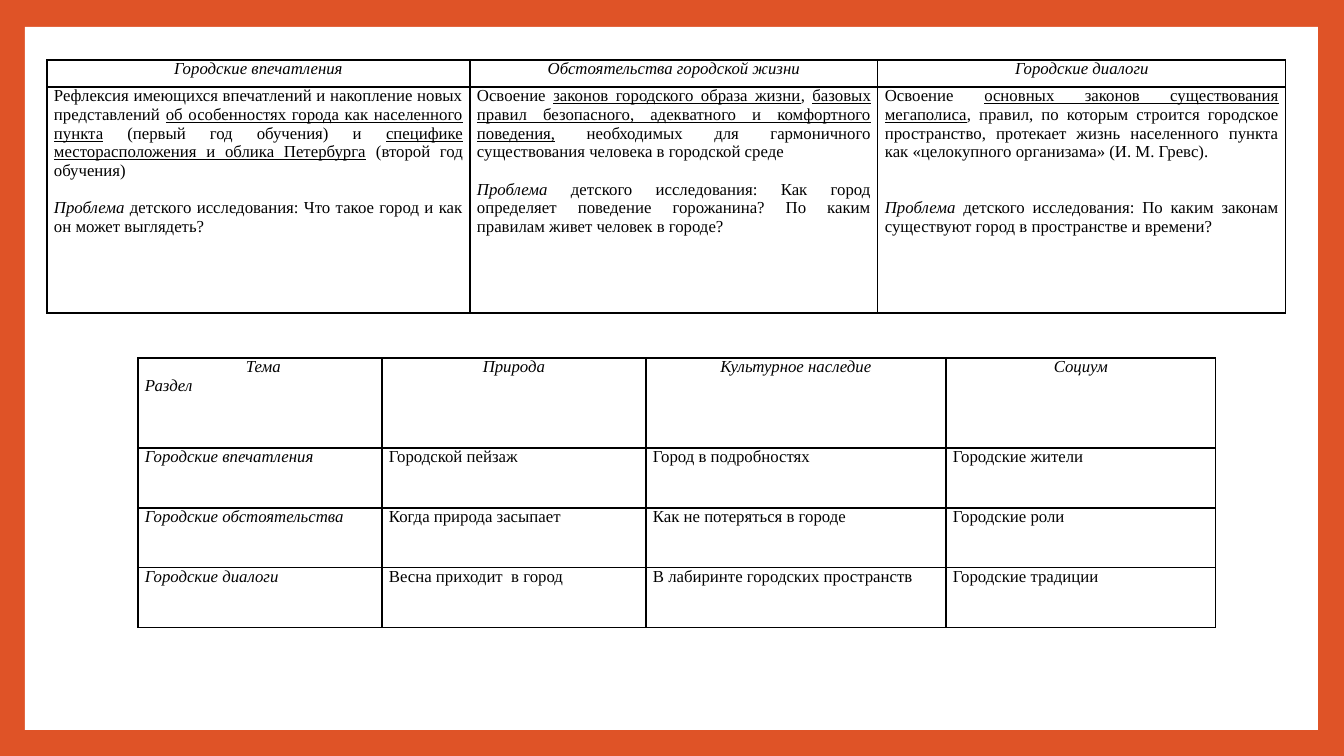
from lxml import etree
from pptx import Presentation
from pptx import util as u
from pptx.dml.color import RGBColor
from pptx.enum import shapes, text
from pptx.oxml.ns import qn

PX = 914400 / 100.8
COLORS = {"frame": "DF5327", "sheet": "FFFFFF", "ink": "000000"}
FONT, SIZE, LINE_HEIGHT = "Times New Roman", 12, 13.3
CENTER, JUSTIFY = text.PP_ALIGN.CENTER, text.PP_ALIGN.JUSTIFY

# Content: a cell is a list of paragraphs, each (align, blank lines above, indent px, spans);
# a span is (wording, style), where style is "i" italic, "u" underlined or "" plain


def line(wording, style="", align=JUSTIFY, indent=0):
    return align, 0, indent, [(wording, style)]


def head(wording):
    return [line(wording, "i", CENTER)]


def problem(question, gap):
    return JUSTIFY, gap, 0, [("Проблема", "i"), (" детского исследования: " + question, "")]


def topic(section, *themes):
    return [[line(section, "i")]] + [[line(theme)] for theme in themes]


SECTIONS = [
    [head("Городские впечатления"), head("Обстоятельства городской жизни"), head("Городские диалоги")],
    [
        [(JUSTIFY, 0, 0, [
            ("Рефлексия имеющихся впечатлений и накопление новых представлений ", ""),
            ("об особенностях города как населенного пункта", "u"),
            (" (первый год обучения) и ", ""),
            ("специфике месторасположения и облика Петербурга", "u"),
            (" (второй год обучения)", "")]),
         problem("Что такое город и как он может выглядеть?", 1)],
        [(JUSTIFY, 0, 0, [
            ("Освоение ", ""),
            ("законов городского образа жизни", "u"),
            (", ", ""),
            ("базовых правил безопасного, адекватного и комфортного поведения,", "u"),
            (" необходимых для гармоничного существования человека в городской среде", "")]),
         problem("Как город определяет поведение горожанина? По каким правилам живет человек в городе?", 1)],
        [(JUSTIFY, 0, 0, [
            ("Освоение ", ""),
            ("основных законов существования мегаполиса", "u"),
            (", правил, по которым строится городское пространство, протекает жизнь населенного "
             "пункта как «целокупного организама» (И. М. Гревс).", "")]),
         problem("По каким законам существуют город в пространстве и времени?", 2)],
    ],
]
THEMES = [
    [[line("Тема", "i", indent=101), line("Раздел", "i")],
     head("Природа"), head("Культурное наследие"), head("Социум")],
    topic("Городские впечатления", "Городской пейзаж", "Город в подробностях", "Городские жители"),
    topic("Городские обстоятельства", "Когда природа засыпает", "Как не потеряться в городе",
          "Городские роли"),
    topic("Городские диалоги", "Весна приходит  в город", "В лабиринте городских пространств",
          "Городские традиции"),
]
# (left, top, column widths, row heights, cells)
TABLES = [
    (47, 60, [423, 408, 408], [27, 226], SECTIONS),
    (138, 358, [244, 264, 300, 270], [90, 60, 60, 60], THEMES),
]


def px(length):
    return u.Emu(round(length * PX))


def color(name):
    return RGBColor.from_string(COLORS[name])


def border(cell):
    props = cell._tc.get_or_add_tcPr()
    for side in ("lnL", "lnR", "lnT", "lnB"):
        edge = etree.SubElement(props, qn("a:" + side), w=str(u.Pt(1)))
        fill = etree.SubElement(edge, qn("a:solidFill"))
        etree.SubElement(fill, qn("a:srgbClr"), val=COLORS["ink"])


def write(frame, paragraphs):
    for number, (align, gap, indent, spans) in enumerate(paragraphs):
        para = frame.add_paragraph() if number else frame.paragraphs[0]
        para.alignment = align
        para.space_before = u.Pt(gap * LINE_HEIGHT)
        if indent:
            para._p.get_or_add_pPr().set("marL", str(px(indent)))
        for wording, style in spans:
            span = para.add_run()
            span.text = wording
            font = span.font
            font.name, font.size = FONT, u.Pt(SIZE)
            font.bold, font.italic, font.underline = False, style == "i", style == "u"
            font.color.rgb = color("ink")


def add_grid(page, left, top, widths, heights, rows):
    table = page.shapes.add_table(len(rows), len(widths), px(left), px(top),
                                  px(sum(widths)), px(sum(heights))).table
    table.first_row = table.horz_banding = False
    for column, width in zip(table.columns, widths):
        column.width = px(width)
    for row, height, contents in zip(table.rows, heights, rows):
        row.height = px(height)
        for cell, paragraphs in zip(row.cells, contents):
            border(cell)
            cell.fill.background()
            cell.margin_left = cell.margin_right = px(7)
            cell.margin_top = cell.margin_bottom = 0
            write(cell.text_frame, paragraphs)


def main():
    deck = Presentation()
    deck.slide_width, deck.slide_height = px(1344), px(756)
    page = deck.slides.add_slide(deck.slide_layouts[6])

    # Orange frame around a white sheet
    page.background.fill.solid()
    page.background.fill.fore_color.rgb = color("frame")
    sheet = page.shapes.add_shape(shapes.MSO_SHAPE.RECTANGLE, px(25), px(27), px(1293), px(703))
    sheet.shadow.inherit = False
    sheet.fill.solid()
    sheet.fill.fore_color.rgb = color("sheet")
    sheet.line.fill.background()

    # Section descriptions above, themes below
    for grid in TABLES:
        add_grid(page, *grid)

    deck.save("out.pptx")


if __name__ == "__main__":
    main()
